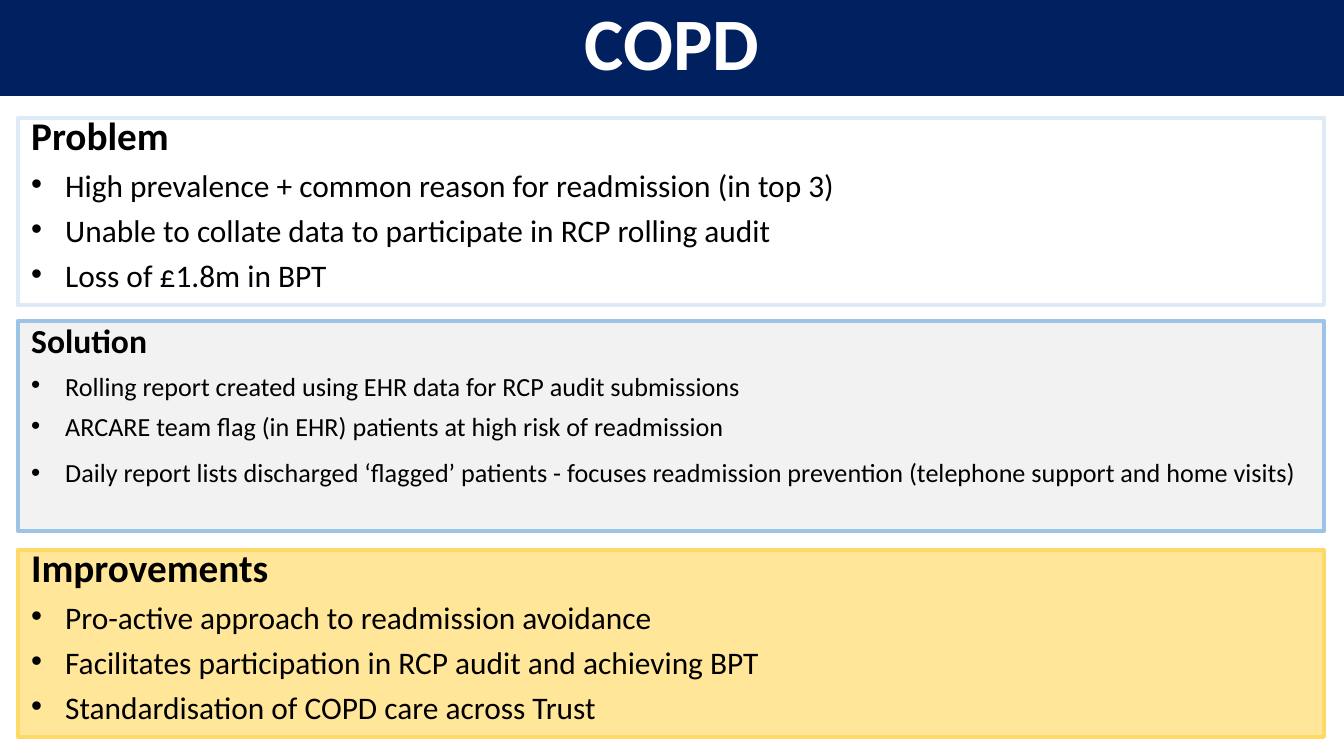
from dataclasses import dataclass

from lxml.etree import SubElement
from pptx import Presentation
from pptx.dml.color import RGBColor
from pptx.enum.shapes import MSO_SHAPE
from pptx.enum.text import MSO_ANCHOR, MSO_AUTO_SIZE, PP_ALIGN
from pptx.oxml.ns import qn
from pptx.util import Emu, Pt

SLIDE_WIDTH, SLIDE_HEIGHT = 1344, 756
EMU_PER_PX = 9144000 / SLIDE_WIDTH
PANEL_LEFT, PANEL_WIDTH = 18, 1306
BULLET_INDENT = 34
FONT = "Calibri"
COLORS = {
    "navy": "002060",
    "white": "FFFFFF",
    "black": "000000",
    "pale blue": "DEEBF7",
    "blue": "9DC3E6",
    "grey": "F2F2F2",
    "pale gold": "FFE699",
    "gold": "FFD966",
}


@dataclass(frozen=True)
class Panel:
    top: int
    height: int
    fill: str
    border: str
    heading: str
    bullets: tuple[str, ...]
    heading_size: float = 21
    bullet_size: float = 16.8
    heading_spacing: float = 0.7
    last_spacing: float = 0.7


PANELS = (
    Panel(118, 187, "white", "pale blue", "Problem", (
        "High prevalence + common reason for readmission (in top 3)",
        "Unable to collate data to participate in RCP rolling audit",
        "Loss of £1.8m in BPT",
    )),
    Panel(321, 210, "grey", "blue", "Solution", (
        "Rolling report created using EHR data for RCP audit submissions",
        "ARCARE team flag (in EHR) patients at high risk of readmission",
        "Daily report lists discharged ‘flagged’ patients - focuses readmission "
        "prevention (telephone support and home visits)",
    ), heading_size=18, bullet_size=14, heading_spacing=0.8, last_spacing=0.9),
    Panel(550, 187, "pale gold", "gold", "Improvements", (
        "Pro-active approach to readmission avoidance",
        "Facilitates participation in RCP audit and achieving BPT",
        "Standardisation of COPD care across Trust",
    )),
)


def px(length: int) -> Emu:
    return Emu(round(length * EMU_PER_PX))


def color(name: str) -> RGBColor:
    return RGBColor.from_string(COLORS[name])


def set_font(paragraph, size: float, color_name: str, bold: bool) -> None:
    font = paragraph.font
    font.name, font.size, font.bold = FONT, Pt(size), bold
    font.color.rgb = color(color_name)


def add_bullet(paragraph) -> None:
    properties = paragraph._p.get_or_add_pPr()
    properties.set("marL", str(px(BULLET_INDENT)))
    properties.set("indent", str(-px(BULLET_INDENT)))
    bullet_font = SubElement(properties, qn("a:buFont"), typeface="Arial")
    bullet_font.addnext(SubElement(properties, qn("a:buChar"), char="•"))
    # The schema puts bullets ahead of the default run properties,
    # so fonts are set after this call.


def draw_title(slide, text: str) -> None:
    title = slide.shapes.title
    title.left, title.top = px(0), px(-2)
    title.width, title.height = px(SLIDE_WIDTH), px(98)
    title.fill.solid()
    title.fill.fore_color.rgb = color("navy")
    frame = title.text_frame
    frame.text = text
    frame.auto_size = MSO_AUTO_SIZE.NONE
    frame.vertical_anchor = MSO_ANCHOR.MIDDLE
    paragraph = frame.paragraphs[0]
    paragraph.alignment = PP_ALIGN.CENTER
    paragraph.line_spacing = 0.9
    set_font(paragraph, 39.6, "white", True)


def draw_panel(slide, panel: Panel) -> None:
    shape = slide.shapes.add_shape(
        MSO_SHAPE.RECTANGLE, px(PANEL_LEFT), px(panel.top),
        px(PANEL_WIDTH), px(panel.height))
    shape.shadow.inherit = False
    shape.fill.solid()
    shape.fill.fore_color.rgb = color(panel.fill)
    shape.line.color.rgb = color(panel.border)
    shape.line.width = Pt(2.25)

    frame = shape.text_frame
    frame.word_wrap = True
    frame.vertical_anchor = MSO_ANCHOR.TOP
    frame.text = "\n".join((panel.heading, *panel.bullets))
    heading, *bullets = frame.paragraphs
    for paragraph in frame.paragraphs:
        paragraph.alignment = PP_ALIGN.LEFT
        paragraph.space_before = Pt(10)
        paragraph.line_spacing = 0.7
    heading.line_spacing = panel.heading_spacing
    bullets[-1].line_spacing = panel.last_spacing
    set_font(heading, panel.heading_size, "black", True)
    for paragraph in bullets:
        add_bullet(paragraph)
        set_font(paragraph, panel.bullet_size, "black", False)


def main() -> None:
    presentation = Presentation()
    presentation.slide_width = px(SLIDE_WIDTH)
    presentation.slide_height = px(SLIDE_HEIGHT)
    slide = presentation.slides.add_slide(presentation.slide_layouts[5])
    draw_title(slide, "COPD")
    for panel in PANELS:
        draw_panel(slide, panel)
    presentation.save("out.pptx")


if __name__ == "__main__":
    main()
